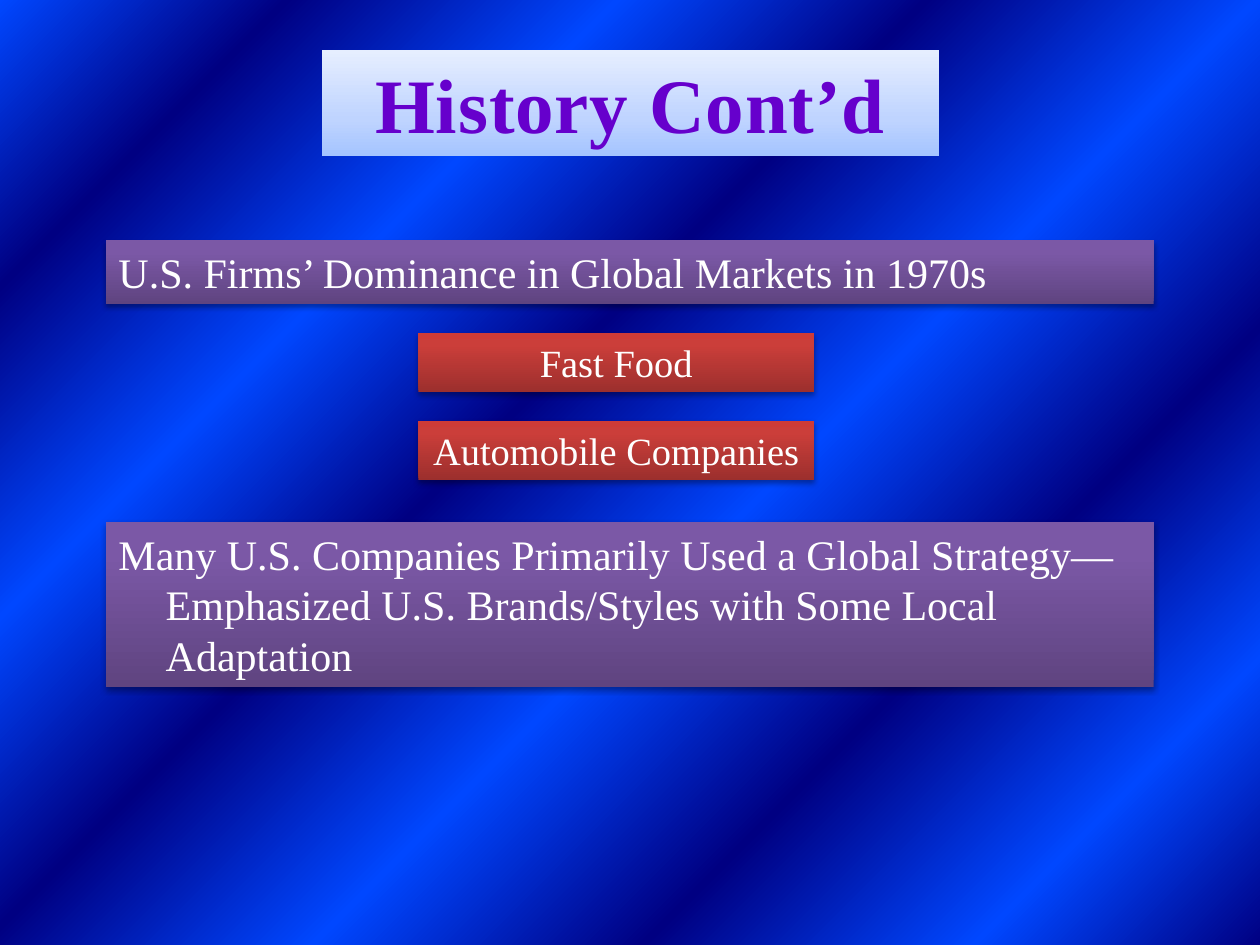
from lxml import etree
from pptx import Presentation
from pptx.dml.color import RGBColor
from pptx.enum import shapes, text
from pptx.oxml.ns import qn
from pptx.util import Pt

FONT = "Times New Roman"
WHITE = RGBColor(0xFF, 0xFF, 0xFF)
VIOLET = RGBColor(0x66, 0x00, 0xCC)
BLACK = RGBColor(0x00, 0x00, 0x00)
NAVY = RGBColor(0x00, 0x00, 0x82)
BRIGHT_BLUE = RGBColor(0x00, 0x47, 0xFF)

# Gradients: (position in percent, colour)
BACKDROP = [(pos, (NAVY, BRIGHT_BLUE)[i % 2])
            for i, pos in enumerate((0, 13, 28, 43, 58, 72, 87, 100))]
PALE_BLUE = [(0, RGBColor(0xA4, 0xC4, 0xFF)), (35, RGBColor(0xBF, 0xD4, 0xFF)),
             (100, RGBColor(0xE6, 0xEE, 0xFF))]
PURPLE = [(0, RGBColor(0x5F, 0x44, 0x80)), (80, RGBColor(0x7B, 0x58, 0xA6)),
          (100, RGBColor(0x7C, 0x57, 0xA8))]
RED = [(0, RGBColor(0x9C, 0x2F, 0x2D)), (80, RGBColor(0xCB, 0x3E, 0x3A)),
       (100, RGBColor(0xCE, 0x3B, 0x37))]


def add_color(parent, color):
    return etree.SubElement(parent, qn("a:srgbClr"), val=str(color))


def set_gradient(fill, owner, stops, angle):
    """Give fill, which lies within the XML element owner, any number of stops."""
    fill.gradient()
    gradient = owner.find(".//" + qn("a:gradFill"))
    for child in list(gradient):
        gradient.remove(child)
    stop_list = etree.SubElement(gradient, qn("a:gsLst"))
    for position, color in stops:
        add_color(etree.SubElement(stop_list, qn("a:gs"), pos=str(position * 1000)), color)
    etree.SubElement(gradient, qn("a:lin"), ang=str(angle * 60000), scaled="0")


def add_shadow(shape):
    effects = shape._element.spPr.find(qn("a:effectLst"))
    shadow = etree.SubElement(effects, qn("a:outerShdw"), blurRad=str(Pt(3.15)),
                              dist=str(Pt(1.8)), dir=str(90 * 60000), rotWithShape="0")
    etree.SubElement(add_color(shadow, BLACK), qn("a:alpha"), val="35000")


def add_banner(slide, box, wording, stops, size, color=WHITE, wrap=True):
    """Place a gradient rectangle with one paragraph of text."""
    banner = slide.shapes.add_shape(shapes.MSO_SHAPE.RECTANGLE, *map(Pt, box))
    set_gradient(banner.fill, banner._element.spPr, stops, 270)
    banner.line.fill.background()
    banner.shadow.inherit = False
    frame = banner.text_frame
    frame.word_wrap = wrap
    frame.auto_size = text.MSO_AUTO_SIZE.SHAPE_TO_FIT_TEXT
    frame.vertical_anchor = text.MSO_ANCHOR.TOP
    paragraph = frame.paragraphs[0]
    paragraph.text = wording
    paragraph.alignment = text.PP_ALIGN.CENTER
    paragraph.font.name = FONT
    paragraph.font.size = Pt(size)
    paragraph.font.color.rgb = color
    return banner, paragraph


def add_title(slide, box):
    _, title = add_banner(slide, box, "History Cont’d", PALE_BLUE, 44, VIOLET)
    title.font.bold = True
    title.runs[0]._r.get_or_add_rPr().set("spc", "50")


def add_statement(slide, box, wording):
    statement, paragraph = add_banner(slide, box, wording, PURPLE, 24)
    add_shadow(statement)
    paragraph.alignment = text.PP_ALIGN.LEFT
    properties = paragraph._p.get_or_add_pPr()
    properties.set("marL", str(Pt(27)))
    properties.set("indent", str(-Pt(27)))


def add_examples(slide, box, examples, pitch):
    left, top, width, height = box
    for row, (wording, wrap) in enumerate(examples):
        example, _ = add_banner(slide, (left, top + row * pitch, width, height),
                                wording, RED, 22, wrap=wrap)
        add_shadow(example)


def main():
    deck = Presentation()
    deck.slide_width, deck.slide_height = Pt(720), Pt(540)
    slide = deck.slides.add_slide(deck.slide_layouts[6])
    set_gradient(slide.background.fill, slide._element, BACKDROP, 225)

    add_title(slide, (184, 28.8, 352.5, 60.5))
    # Statements with the examples between them
    left, width = 60.6, 598.6
    add_statement(slide, (left, 137.2, width, 36.3),
                  "U.S. Firms’ Dominance in Global Markets in 1970s")
    add_examples(slide, (239.1, 190.4, 226, 33.8),
                 [("Fast Food", True), ("Automobile Companies", False)], pitch=50.2)
    add_statement(slide, (left, 298.3, width, 94.3),
                  "Many U.S. Companies Primarily Used a Global Strategy—"
                  "Emphasized U.S. Brands/Styles with Some Local Adaptation")
    deck.save("out.pptx")


if __name__ == "__main__":
    main()
